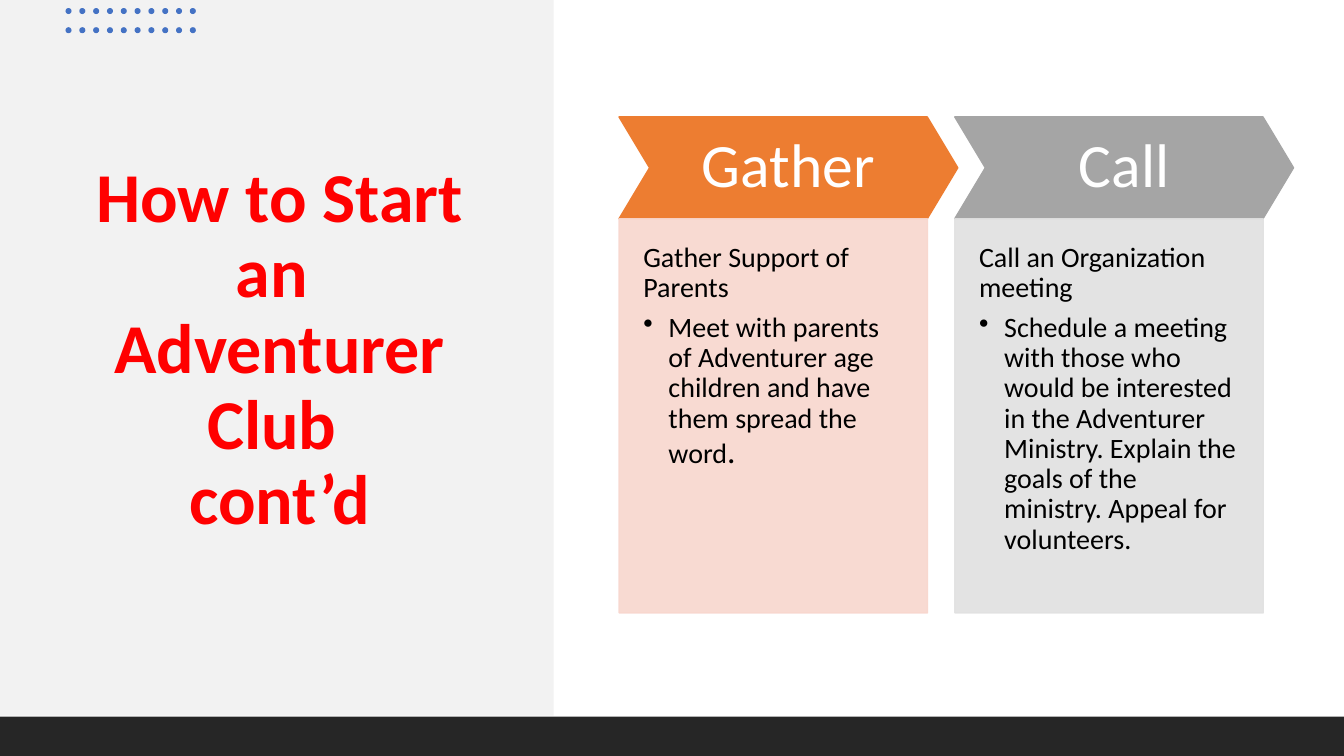
import pptx
import pptx.util
import pptx.dml.color
import pptx.enum.shapes
import pptx.enum.text
import pptx.oxml
import pptx.oxml.ns

WIDE, HIGH = 13.33, 7.5
FONT = "Calibri"
HUES = {"panel": "F2F2F2", "title": "FF0000", "dot": "4472C4", "foot": "262626",
        "white": "FFFFFF", "black": "000000"}
TITLE = ["How to Start an ", "Adventurer Club ", "cont’d"]
STEPS = [
    {"head": "Gather", "hue": "ED7D31", "tint": "F8D7CE",
     "lead": "Gather Support of Parents",
     "point": [("Meet with parents of Adventurer age children and have "
                "them spread the word", 20), (".", 24)]},
    {"head": "Call", "hue": "A5A5A5", "tint": "E1E1E1",
     "lead": "Call an Organization meeting",
     "point": [("Schedule a meeting with those who would be interested in the "
                "Adventurer Ministry. Explain the goals of the ministry. "
                "Appeal for volunteers.", 20)]},
]
DOTS = {"cols": 10, "rows": 2, "left": 0.65, "top": 0.08,
        "dx": 0.137, "dy": 0.19, "size": 0.06}
GRID = {"left": 6.14, "top": 1.16, "pitch": 3.33, "arrow": 3.36,
        "head": 1.01, "card": 3.06, "body": 3.91}

KIND = pptx.enum.shapes.MSO_SHAPE
ALIGN = pptx.enum.text.PP_ALIGN
ANCHOR = pptx.enum.text.MSO_ANCHOR
Inches = pptx.util.Inches
Pt = pptx.util.Pt


def tone(text):
    return pptx.dml.color.RGBColor.from_string(text)


def sheer(fill, share):
    for hue in fill.iter(pptx.oxml.ns.qn("a:srgbClr")):
        alpha = pptx.oxml.parse_xml(
            f'<a:alpha {pptx.oxml.ns.nsdecls("a")} val="{share * 1000}"/>')
        hue.append(alpha)


def draw(shapes, kind, box, hue, edge=False):
    shape = shapes.add_shape(kind, *map(Inches, box))
    shape.shadow.inherit = False
    shape.fill.solid()
    shape.fill.fore_color.rgb = tone(hue)
    if edge:
        shape.line.color.rgb = tone(hue)
        shape.line.width = Pt(1)
    else:
        shape.line.fill.background()
    return shape


def frame(shape, pads, anchor):
    text = shape.text_frame
    text.word_wrap = True
    text.vertical_anchor = anchor
    (text.margin_left, text.margin_top,
     text.margin_right, text.margin_bottom) = map(Inches, pads)
    return text


def style(para, align, after=0):
    para.alignment = align
    para.line_spacing = 0.9
    para.space_before = Pt(0)
    para.space_after = Pt(after)


def write(para, words, size, hue, bold=False):
    run = para.add_run()
    run.text = words
    run.font.name = FONT
    run.font.size = Pt(size)
    run.font.bold = bold
    run.font.color.rgb = tone(hue)


def bullet(para):
    props = para._p.get_or_add_pPr()
    props.set("marL", str(Inches(0.25)))
    props.set("indent", str(-Inches(0.25)))
    props.append(pptx.oxml.parse_xml(
        f'<a:buChar {pptx.oxml.ns.nsdecls("a")} char="•"/>'))


def title(shapes):
    box = shapes.add_textbox(*map(Inches, (0.56, 0.71, 4.43, 5.54)))
    para = frame(box, (0.1, 0.05, 0.1, 0.05), ANCHOR.MIDDLE).paragraphs[0]
    style(para, ALIGN.CENTER)
    for row, words in enumerate(TITLE):
        if row:
            para.add_line_break()
        write(para, words, 50, HUES["title"], True)


def dots(shapes):
    group = shapes.add_group_shape()
    for col in range(DOTS["cols"]):
        for row in range(DOTS["rows"]):
            box = (DOTS["left"] + col * DOTS["dx"], DOTS["top"] + row * DOTS["dy"],
                   DOTS["size"], DOTS["size"])
            draw(group.shapes, KIND.OVAL, box, HUES["dot"])


def step(shapes, col, item):
    left = GRID["left"] + col * GRID["pitch"]
    arrow = draw(shapes, KIND.CHEVRON,
                 (left, GRID["top"], GRID["arrow"], GRID["head"]), item["hue"], True)
    arrow.adjustments[0] = 0.3
    para = frame(arrow, (0.12,) * 4, ANCHOR.MIDDLE).paragraphs[0]
    style(para, ALIGN.CENTER)
    write(para, item["head"], 44, HUES["white"])

    card = draw(shapes, KIND.RECTANGLE,
                (left, GRID["top"] + GRID["head"], GRID["card"], GRID["body"]),
                item["tint"], True)
    sheer(card._element.spPr, 90)
    text = frame(card, (0.24, 0.24, 0.24, 0.48), ANCHOR.TOP)
    lead = text.paragraphs[0]
    style(lead, ALIGN.LEFT, 7)
    write(lead, item["lead"], 20, HUES["black"])
    point = text.add_paragraph()
    style(point, ALIGN.LEFT, 3)
    bullet(point)
    for words, size in item["point"]:
        write(point, words, size, HUES["black"])


def main():
    deck = pptx.Presentation()
    deck.slide_width, deck.slide_height = Inches(WIDE), Inches(HIGH)
    shapes = deck.slides.add_slide(deck.slide_layouts[6]).shapes
    draw(shapes, KIND.RECTANGLE, (0, 0, 5.49, 7.1), HUES["panel"])
    title(shapes)
    dots(shapes)
    draw(shapes, KIND.RECTANGLE, (0, 7.11, WIDE, HIGH - 7.11), HUES["foot"])
    group = shapes.add_group_shape()
    for col, item in enumerate(STEPS):
        step(group.shapes, col, item)
    deck.save("out.pptx")


if __name__ == "__main__":
    main()
